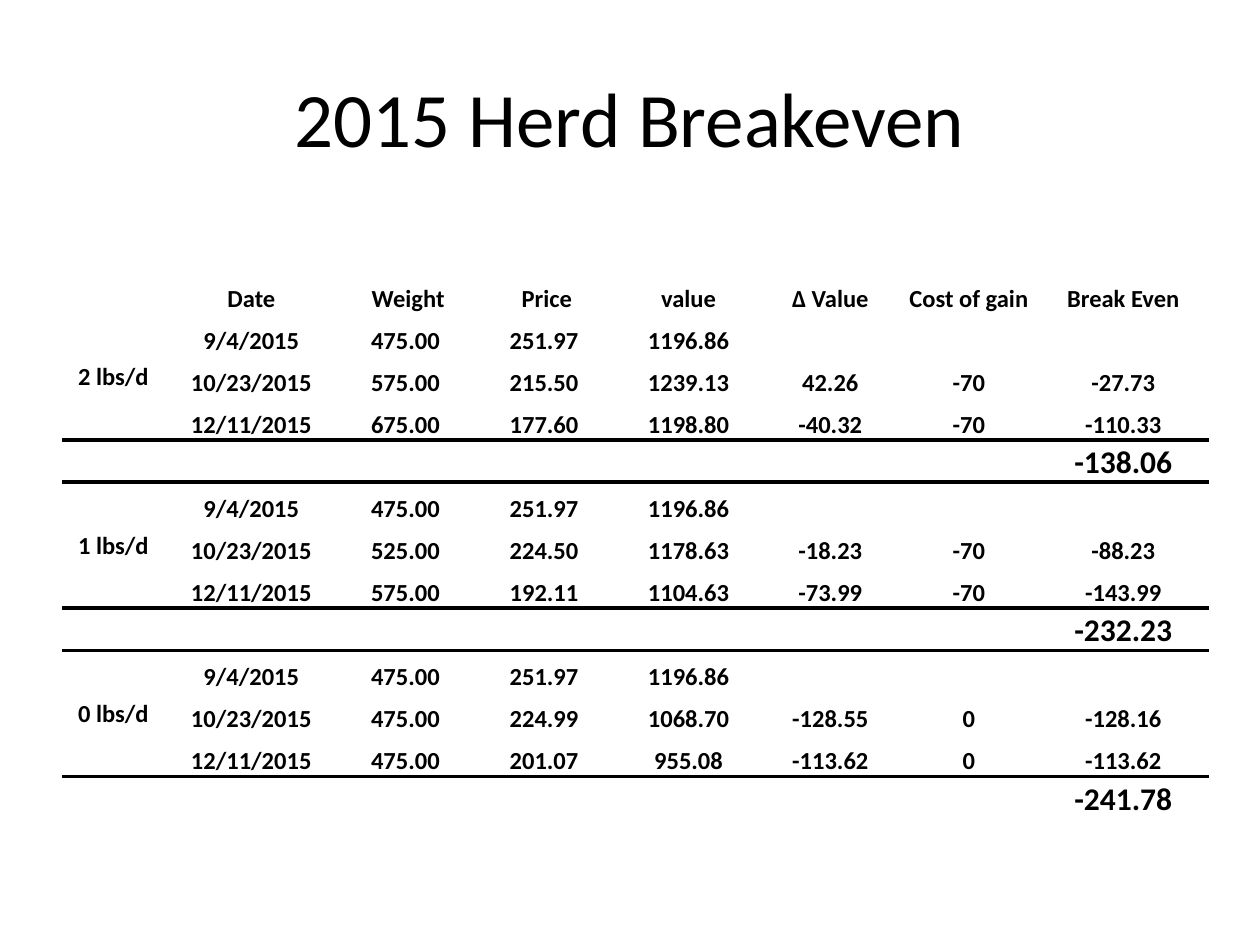
from dataclasses import dataclass

from lxml import etree
from pptx import Presentation
from pptx.dml.color import RGBColor
from pptx.enum import text
from pptx.oxml import ns
from pptx.util import Inches, Pt


@dataclass(frozen=True)
class Theme:
    font: str = "Calibri"
    ink: str = "000000"
    paper: str = "FFFFFF"
    title: float = 44
    body: float = 14
    total: float = 18
    rule: float = 2.25
    hairline: float = 1


@dataclass(frozen=True)
class Weighing:
    date: str
    weight: str
    price: str
    value: str
    change: str = ""
    cost: str = ""
    break_even: str = ""

    def texts(self) -> list[str]:
        # The number format of weights and prices ends with a space.
        return [self.date, f"{self.weight} ", f"{self.price} ", self.value,
                self.change, self.cost, self.break_even]


@dataclass(frozen=True)
class Ration:
    gain: str
    weighings: tuple[Weighing, ...]
    total: str


THEME = Theme()
START = Weighing("9/4/2015", "475.00", "251.97", "1196.86")
MIDDLE, END = "10/23/2015", "12/11/2015"
HEADER = ["", "Date", "Weight", "Price", "value", "Δ Value", "Cost of gain", "Break Even"]
RATIONS = [
    Ration("2 lbs/d", (
        START,
        Weighing(MIDDLE, "575.00", "215.50", "1239.13", "42.26", "-70", "-27.73"),
        Weighing(END, "675.00", "177.60", "1198.80", "-40.32", "-70", "-110.33"),
    ), "-138.06"),
    Ration("1 lbs/d", (
        START,
        Weighing(MIDDLE, "525.00", "224.50", "1178.63", "-18.23", "-70", "-88.23"),
        Weighing(END, "575.00", "192.11", "1104.63", "-73.99", "-70", "-143.99"),
    ), "-232.23"),
    Ration("0 lbs/d", (
        START,
        Weighing(MIDDLE, "475.00", "224.99", "1068.70", "-128.55", "0", "-128.16"),
        Weighing(END, "475.00", "201.07", "955.08", "-113.62", "0", "-113.62"),
    ), "-241.78"),
]
COLUMNS = [0.8, 1.39, 1.1, 1.1, 1.15, 1.1, 1.1, 1.35]
HEADER_HEIGHT, ROW_HEIGHT = 0.57, 0.334
GROUP = len(RATIONS[0].weighings) + 1


def write(tf, content: str, size: float, bold: bool) -> None:
    p = tf.paragraphs[0]
    p.alignment = text.PP_ALIGN.CENTER
    if not content:
        return
    r = p.add_run()
    r.text = content
    for name, value in {"name": THEME.font, "size": Pt(size), "bold": bold}.items():
        setattr(r.font, name, value)
    r.font.color.rgb = RGBColor.from_string(THEME.ink)


def set_borders(cell, ruled_sides: str) -> None:
    """Rule the given sides (letters of L, R, T, B) in ink and the others in paper."""
    tc_pr = cell._tc.get_or_add_tcPr()
    for i, side in enumerate("LRTB"):
        ruled = side in ruled_sides
        width = Pt(THEME.rule if ruled else THEME.hairline)
        ln = etree.Element(ns.qn(f"a:ln{side}"), w=str(int(width)))
        fill = etree.SubElement(ln, ns.qn("a:solidFill"))
        etree.SubElement(fill, ns.qn("a:srgbClr"), val=THEME.ink if ruled else THEME.paper)
        tc_pr.insert(i, ln)


def table_rows() -> list[list[str]]:
    rows = [HEADER]
    for ration in RATIONS:
        for i, weighing in enumerate(ration.weighings):
            rows.append([ration.gain if i == 0 else "", *weighing.texts()])
        rows.append([""] * (len(HEADER) - 1) + [ration.total])
    return rows


def add_breakeven_table(s) -> None:
    rows = table_rows()
    last = len(rows) - 1
    height = HEADER_HEIGHT + last * ROW_HEIGHT
    table = s.shapes.add_table(len(rows), len(COLUMNS), Inches(0.5), Inches(1.92),
                               Inches(sum(COLUMNS)), Inches(height)).table
    table.first_row = table.horz_banding = False
    for column, width in zip(table.columns, COLUMNS):
        column.width = Inches(width)

    totals = range(GROUP, last + 1, GROUP)
    ruled_rows = {row for total in totals for row in (total - 1, total)} - {last}
    cell_format = {"margin_left": Inches(0.01), "margin_right": Inches(0.01),
                   "margin_top": Inches(0.01), "margin_bottom": 0}
    for r, row in enumerate(rows):
        table.rows[r].height = Inches(ROW_HEIGHT if r else HEADER_HEIGHT)
        for c, content in enumerate(row):
            cell = table.cell(r, c)
            starts_label = c == 0 and r % GROUP == 1
            for name, value in cell_format.items():
                setattr(cell, name, value)
            cell.vertical_anchor = (text.MSO_ANCHOR.MIDDLE if starts_label
                                    else text.MSO_ANCHOR.BOTTOM)
            cell.fill.background()
            set_borders(cell, ("T" if r - 1 in ruled_rows else "")
                        + ("B" if r in ruled_rows or starts_label else ""))
            write(cell.text_frame, content, THEME.total if r in totals else THEME.body, True)
    for total in totals:
        table.cell(total - GROUP + 1, 0).merge(table.cell(total - 1, 0))


def add_title(s, content: str) -> None:
    title = s.shapes.title
    box = {"left": 0.5, "top": 0.3, "width": 9, "height": 1.25}
    for name, value in box.items():
        setattr(title, name, Inches(value))
    title.text_frame.vertical_anchor = text.MSO_ANCHOR.MIDDLE
    write(title.text_frame, content, THEME.title, False)


def main() -> None:
    prs = Presentation()
    prs.slide_width, prs.slide_height = Inches(10), Inches(7.5)
    s = prs.slides.add_slide(prs.slide_layouts.get_by_name("Title Only"))
    add_title(s, "2015 Herd Breakeven")
    add_breakeven_table(s)
    prs.save("out.pptx")


if __name__ == "__main__":
    main()
